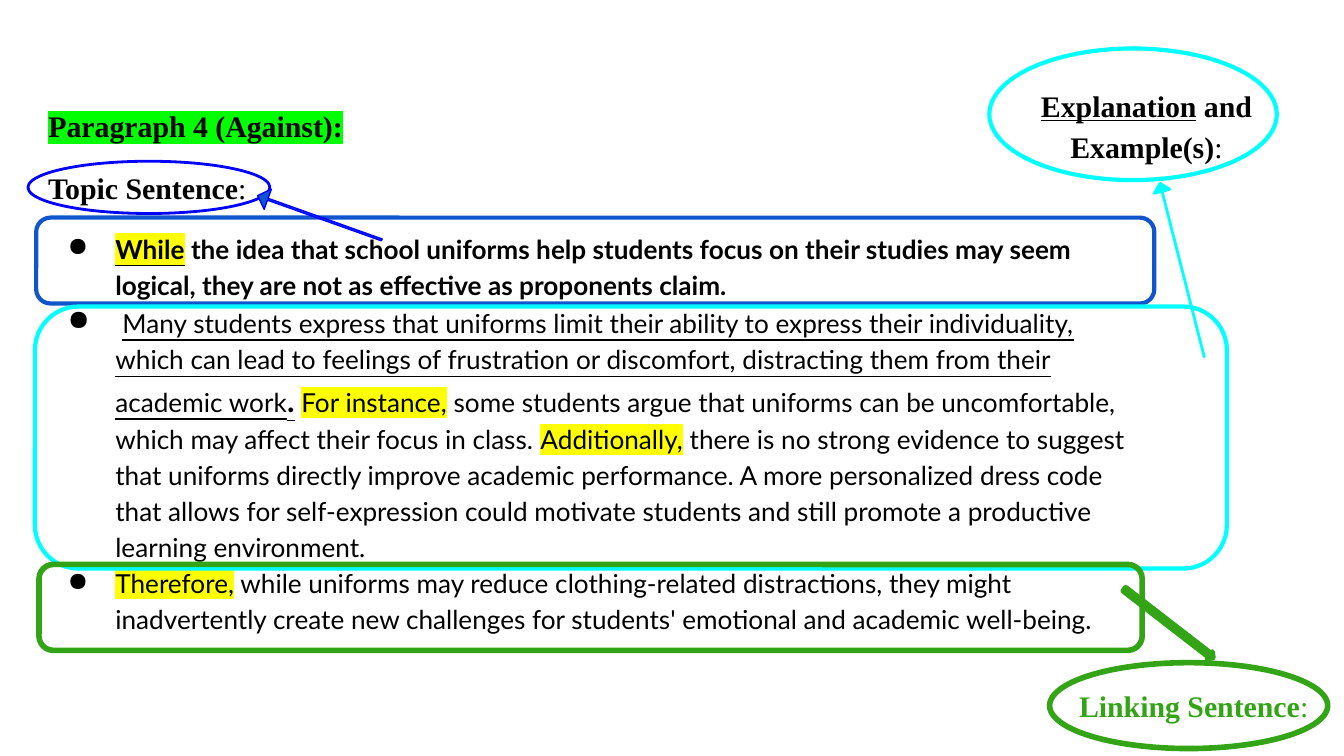
"""Build the annotated counter-argument paragraph slide."""
from lxml.etree import SubElement
from pptx import Presentation
from pptx.dml.color import RGBColor
from pptx.enum.shapes import MSO_SHAPE as SHAPE
from pptx.enum.text import MSO_ANCHOR as ANCHOR, MSO_AUTO_SIZE as AUTO_SIZE, PP_ALIGN as ALIGN
from pptx.oxml.ns import qn
from pptx.util import Pt

COLORS = {
    "black": "000000", "yellow": "FFFF00", "lime": "00FF00", "blue": "1155CC",
    "pure blue": "0000FF", "cyan": "00FFFF", "green": "33A415",
}
SERIF, SANS = "Times New Roman", "Lato"

# Runs: text, style letters (b bold, u underline), highlight, size
HEADING = [("Paragraph 4 (Against):", "b", "lime")]
TOPIC = [("Topic Sentence", "b"), (":", "")]
BULLETS = [
    [("While", "bu", "yellow"),
     (" the idea that school uniforms help students focus on their studies may seem "
      "logical, they are not as effective as proponents claim.", "b")],
    [(" ", "", None, 15),
     ("Many students express that uniforms limit their ability to express their "
      "individuality, which can lead to feelings of frustration or discomfort, "
      "distracting them from their academic work", "u"),
     (".", "bu", None, 17),
     (" ", ""),
     ("For instance,", "", "yellow"),
     (" some students argue that uniforms can be uncomfortable, which may affect "
      "their focus in class. ", ""),
     ("Additionally,", "", "yellow"),
     (" there is no strong evidence to suggest that uniforms directly improve academic "
      "performance. A more personalized dress code that allows for self-expression could "
      "motivate students and still promote a productive learning environment.", "")],
    [("Therefore,", "", "yellow"),
     (" while uniforms may reduce clothing-related distractions, they might inadvertently "
      "create new challenges for students' emotional and academic well-being.", "")],
]
LABELS = [
    ((535, 36.7, 158.4, 46), "black", ALIGN.CENTER,
     [("Explanation", "bu"), (" and Example(s)", "b"), (":", "")]),
    ((571, 358.5, 153, 21), "green", ALIGN.LEFT,
     [("Linking Sentence", "b"), (":", "")]),
]

# Outlines: preset, box, line colour, line width
OUTLINES = [
    (SHAPE.ROUNDED_RECTANGLE, (19.4, 116.6, 599, 46), "blue", 2.25),
    (SHAPE.ROUNDED_RECTANGLE, (18.7, 164.2, 638.6, 140.4), "cyan", 2.25),
    (SHAPE.OVAL, (530, 26, 154, 70.5), "cyan", 2.25),
    (SHAPE.OVAL, (15, 86.4, 129.6, 28), "pure blue", 1.5),
    (SHAPE.ROUNDED_RECTANGLE, (20.9, 302.4, 591, 46), "green", 3),
    (SHAPE.OVAL, (562.3, 355, 149, 46), "green", 3),
]
# Arrows: box, rotation, shaft share, fill, line colour, line width
ARROWS = [
    ((136, 110.9, 70.6, 11.5), 199.6, 0.09, "blue", "pure blue", 0.75),
    ((585.4, 140.4, 95.8, 8.6), 255.7, 0, "cyan", "cyan", 1.5),
    ((596.2, 331.9, 59.8, 4.3), 37.7, 0.5, "green", "green", 3),
]


def rgb(name):
    return RGBColor.from_string(COLORS[name])


def write(paragraph, runs, font_name, size, color="black", align=ALIGN.LEFT):
    paragraph.alignment = align
    paragraph.line_spacing = 1.15
    font = paragraph.font
    font.name, font.size = font_name, Pt(size)
    font.color.rgb = rgb(color)
    for text, style, highlight, run_size in (item + (None,) * (4 - len(item)) for item in runs):
        run = paragraph.add_run()
        run.text = text
        run.font.bold = "b" in style
        run.font.underline = "u" in style
        if run_size:
            run.font.size = Pt(run_size)
        if highlight:
            mark = SubElement(run.font._element, qn("a:highlight"))
            SubElement(mark, qn("a:srgbClr"), val=COLORS[highlight])


def add_bullet(paragraph):
    properties = paragraph._p.get_or_add_pPr()
    properties.set("marL", str(Pt(36)))
    properties.set("indent", str(Pt(-25.5)))
    SubElement(properties, qn("a:buChar"), char="●")


def place(shape, box):
    shape.left, shape.top, shape.width, shape.height = map(Pt, box)


def set_frame(shape, vertical_margin):
    frame = shape.text_frame
    frame.word_wrap = True
    frame.auto_size = AUTO_SIZE.NONE
    frame.vertical_anchor = ANCHOR.TOP
    frame.margin_left = frame.margin_right = Pt(7.2)
    frame.margin_top = frame.margin_bottom = Pt(vertical_margin)
    return frame


def add_shape(slide, preset, box, line_color, line_width):
    shape = slide.shapes.add_shape(preset, *map(Pt, box))
    shape.shadow.inherit = False
    shape.fill.background()
    shape.line.color.rgb = rgb(line_color)
    shape.line.width = Pt(line_width)
    return shape


def main():
    presentation = Presentation()
    presentation.slide_width, presentation.slide_height = Pt(720), Pt(405)
    slide = presentation.slides.add_slide(presentation.slide_layouts[5])

    title = slide.shapes.title
    place(title, (18.7, 55, 300, 22))
    write(set_frame(title, 0).paragraphs[0], HEADING, SERIF, 16)

    body = set_frame(slide.shapes.add_textbox(*map(Pt, (18.7, 88.2, 599, 256))), 0)
    write(body.paragraphs[0], TOPIC, SERIF, 16)
    for index, runs in enumerate(BULLETS):
        paragraph = body.add_paragraph()
        paragraph.space_before = Pt(0 if index else 12)
        add_bullet(paragraph)
        write(paragraph, runs, SANS, 14)

    for outline in OUTLINES:
        add_shape(slide, *outline)
    for box, rotation, shaft, fill, line_color, line_width in ARROWS:
        arrow = add_shape(slide, SHAPE.RIGHT_ARROW, box, line_color, line_width)
        arrow.rotation = rotation
        arrow.adjustments[0] = shaft
        arrow.fill.solid()
        arrow.fill.fore_color.rgb = rgb(fill)
    for box, color, align, runs in LABELS:
        label = set_frame(slide.shapes.add_textbox(*map(Pt, box)), 7.2)
        write(label.paragraphs[0], runs, SERIF, 16, color, align)

    presentation.save("out.pptx")


if __name__ == "__main__":
    main()
